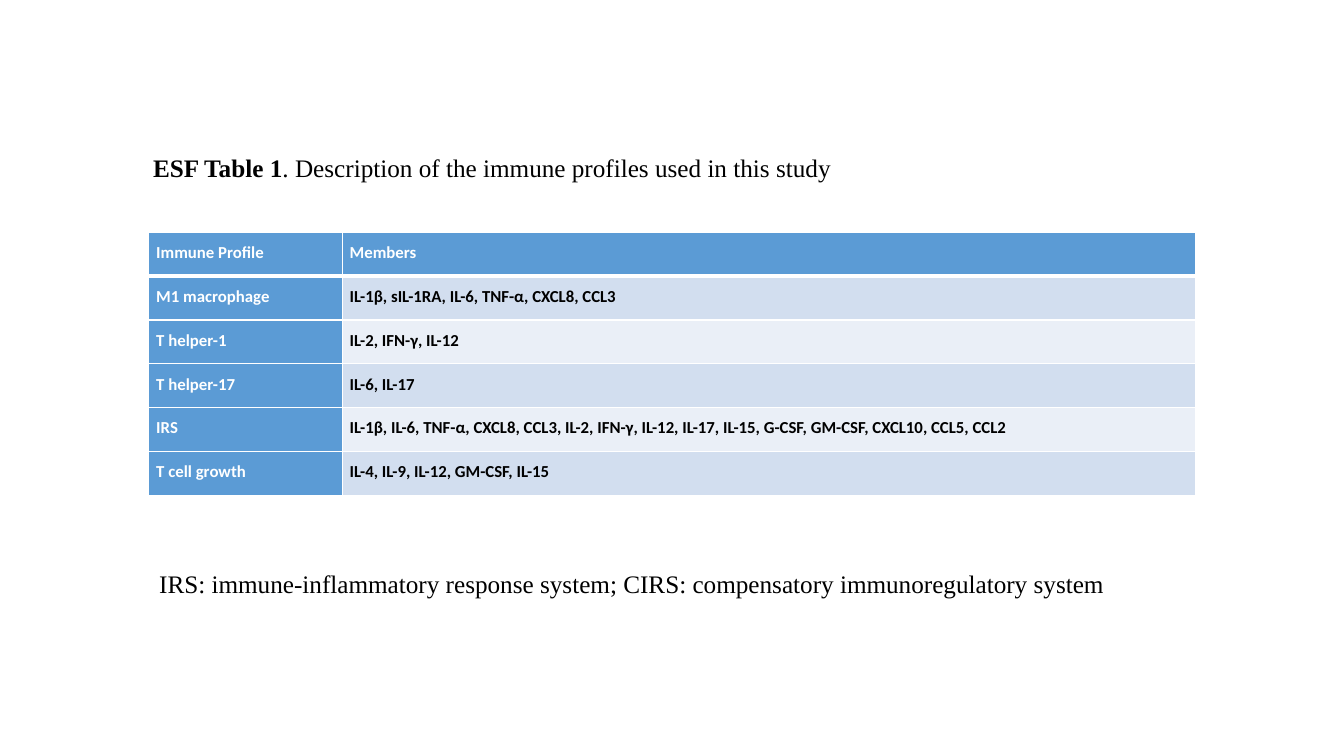
"""Build a slide with a table of immune profiles and their members."""
import pptx
import pptx.dml.color
import pptx.enum.text
import pptx.oxml
import pptx.oxml.ns
import pptx.util

Pt = pptx.util.Pt
RGBColor = pptx.dml.color.RGBColor

WHITE = RGBColor(0xFF, 0xFF, 0xFF)
BLACK = RGBColor(0x00, 0x00, 0x00)
BLUE = RGBColor(0x5B, 0x9B, 0xD5)
BANDS = (RGBColor(0xD2, 0xDE, 0xEF), RGBColor(0xEA, 0xEF, 0xF7))

PROFILES = (
    ("Immune Profile", "Members"),
    ("M1 macrophage", "IL-1β, sIL-1RA, IL-6, TNF-α, CXCL8, CCL3"),
    ("T helper-1", "IL-2, IFN-γ, IL-12"),
    ("T helper-17", "IL-6, IL-17"),
    ("IRS", "IL-1β, IL-6, TNF-α, CXCL8, CCL3, IL-2, IFN-γ, IL-12, IL-17, IL-15, "
            "G-CSF, GM-CSF, CXCL10, CCL5, CCL2"),
    ("T cell growth", "IL-4, IL-9, IL-12, GM-CSF, IL-15"),
)
COLUMN_WIDTHS = (Pt(138.2), Pt(609.8))
ROW_HEIGHT = Pt(31.3)


def format_run(span, font, size, color, bold):
    span.font.name = font
    span.font.size = Pt(size)
    span.font.color.rgb = color
    span.font.bold = bold


def fill_caption(box, left, top, width, pieces):
    box.left, box.top, box.width, box.height = Pt(left), Pt(top), Pt(width), Pt(29.5)
    frame = box.text_frame
    frame.word_wrap = True
    frame.auto_size = pptx.enum.text.MSO_AUTO_SIZE.NONE
    frame.vertical_anchor = pptx.enum.text.MSO_ANCHOR.TOP
    para = frame.paragraphs[0]
    para.alignment = pptx.enum.text.PP_ALIGN.LEFT
    para.line_spacing = 1.07
    para.space_after = Pt(8)
    for text, bold in pieces:
        span = para.add_run()
        span.text = text
        format_run(span, "Times New Roman", 18, BLACK, bold)


def add_border(cell, side, width):
    namespace = pptx.oxml.ns.nsdecls("a")
    cell._tc.get_or_add_tcPr().append(pptx.oxml.parse_xml(
        f'<a:{side} {namespace} w="{Pt(width)}"><a:solidFill>'
        f'<a:srgbClr val="{WHITE}"/></a:solidFill></a:{side}>'))


def format_cell(cell, text, row, column):
    is_heading = row == 0 or column == 0
    cell.margin_left = cell.margin_right = Pt(5.4)
    cell.margin_top = cell.margin_bottom = 0
    add_border(cell, "lnL", 1)
    add_border(cell, "lnR", 1)
    add_border(cell, "lnT", 3 if row == 1 else 1)
    add_border(cell, "lnB", 3 if row == 0 else 1)
    cell.fill.solid()
    cell.fill.fore_color.rgb = BLUE if is_heading else BANDS[(row - 1) % 2]
    para = cell.text_frame.paragraphs[0]
    para.text = text
    para.line_spacing = 1.5
    format_run(para.runs[0], "Calibri", 12, WHITE if is_heading else BLACK, True)


def add_profile_table(page):
    table = page.shapes.add_table(
        len(PROFILES), len(COLUMN_WIDTHS), Pt(106.2), Pt(166),
        sum(COLUMN_WIDTHS), ROW_HEIGHT * len(PROFILES)).table
    table.first_col = True
    for column, width in zip(table.columns, COLUMN_WIDTHS):
        column.width = width
    for row, texts in enumerate(PROFILES):
        table.rows[row].height = ROW_HEIGHT
        for column, text in enumerate(texts):
            format_cell(table.cell(row, column), text, row, column)


def main():
    deck = pptx.Presentation()
    deck.slide_width, deck.slide_height = Pt(960), Pt(540)
    page = deck.slides.add_slide(deck.slide_layouts[5])
    fill_caption(page.shapes.title, 102.2, 103.7, 557.3, (
        ("ESF Table 1", True),
        (". Description of the immune profiles used in this study", False)))
    add_profile_table(page)
    footnote = page.shapes.add_textbox(0, 0, 0, 0)
    fill_caption(footnote, 106.6, 401, 756, (
        ("IRS: immune-inflammatory response system; "
         "CIRS: compensatory immunoregulatory system", False),))
    deck.save("out.pptx")


if __name__ == "__main__":
    main()
